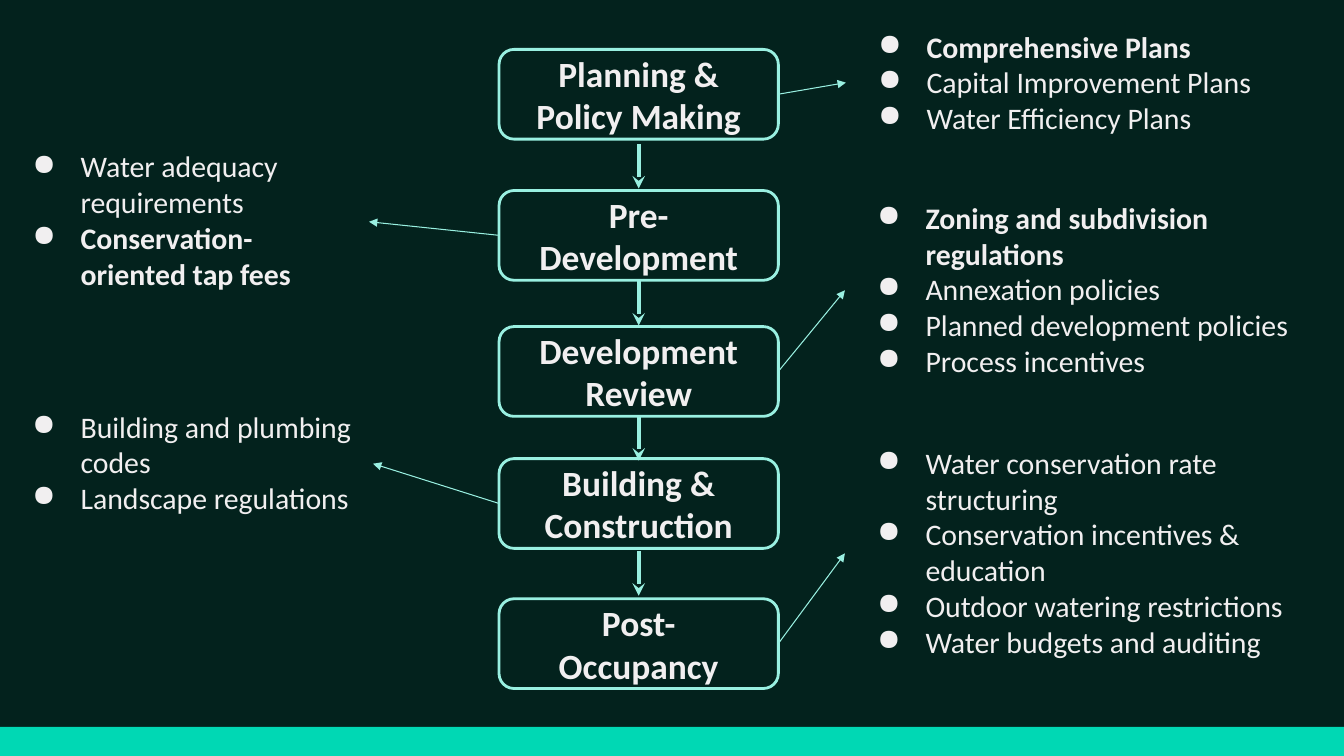
import pptx
import pptx.util
import pptx.dml.color
import pptx.enum.dml
import pptx.enum.shapes
import pptx.enum.text
import pptx.oxml
import pptx.oxml.ns
import lxml.etree

Inches = pptx.util.Inches
COLORS = {"background": "03221D", "footer": "00D8B4", "outline": "99F0E1", "text": "F1EFF0"}
FONT = "Calibri"
SLIDE_W, SLIDE_H = 13.33, 7.5
FOOTER_TOP = 7.21
STAGE_LEFT, STAGE_W, STAGE_H = 4.95, 2.77, 0.89
STAGE_MID = STAGE_LEFT + STAGE_W / 2
FLOW_LENGTH = 0.44

# Each stage: box top, top of the arrow leading to it, lines, and its policy list
# (box position and size, arrow tip, items as text and bold)
STAGES = [
    {"top": 0.49, "flow": None, "lines": ["Planning & Policy Making"],
     "box": (8.39, 0.15, 4.59, 1.35), "tip": (8.39, 0.82),
     "policies": [("Comprehensive Plans", True),
                  ("Capital Improvement Plans", False),
                  ("Water Efficiency Plans", False)]},
    {"top": 1.89, "flow": 1.43, "lines": ["Pre-", "Development"],
     "box": (0, 1.34, 3.65, 1.71), "tip": (3.66, 2.2),
     "policies": [("Water adequacy requirements", False),
                  ("Conservation-oriented tap fees", True)]},
    {"top": 3.24, "flow": 2.79, "lines": ["Development Review"],
     "box": (8.38, 1.85, 4.95, 2.06), "tip": (8.38, 2.88),
     "policies": [("Zoning and subdivision regulations", True),
                  ("Annexation policies", False),
                  ("Planned development policies", False),
                  ("Process incentives", False)]},
    {"top": 4.55, "flow": 4.13, "lines": ["Building & Construction"],
     "box": (0, 3.92, 3.7, 1.35), "tip": (3.7, 4.6),
     "policies": [("Building and plumbing codes", False),
                  ("Landscape regulations", False)]},
    {"top": 5.94, "flow": 5.47, "lines": ["Post-", "Occupancy"],
     "box": (8.38, 4.28, 4.95, 2.42), "tip": (8.38, 5.49),
     "policies": [("Water conservation rate structuring", False),
                  ("Conservation incentives & education", False),
                  ("Outdoor watering restrictions", False),
                  ("Water budgets and auditing", False)]},
]


def color(name):
    return pptx.dml.color.RGBColor.from_string(COLORS[name])


def add_bullet(paragraph):
    properties = paragraph._p.get_or_add_pPr()
    properties.set("marL", str(Inches(0.67)))
    properties.set("indent", str(Inches(-0.48)))
    bullet_color = pptx.oxml.parse_xml(
        f'<a:buClr {pptx.oxml.ns.nsdecls("a")}><a:srgbClr val="{COLORS["text"]}"/></a:buClr>')
    properties.append(bullet_color)
    bullet = lxml.etree.SubElement(properties, pptx.oxml.ns.qn("a:buChar"))
    bullet.set("char", "●")


def write(frame, items, size, align, margins, anchor, bullets=False):
    """Fill a text frame with (text, bold) items, one paragraph each."""
    frame.word_wrap = True
    frame.vertical_anchor = anchor
    frame.margin_left = frame.margin_right = Inches(margins[0])
    frame.margin_top = frame.margin_bottom = Inches(margins[1])
    for index, (text, bold) in enumerate(items):
        paragraph = frame.add_paragraph() if index else frame.paragraphs[0]
        paragraph.alignment = align
        if bullets:
            add_bullet(paragraph)
        run = paragraph.add_run()
        run.text = text
        run.font.name = FONT
        run.font.size = pptx.util.Pt(size)
        run.font.bold = bold
        run.font.color.rgb = color("text")


def add_arrow(slide, start, end, width, head):
    arrow = slide.shapes.add_connector(
        pptx.enum.shapes.MSO_CONNECTOR.STRAIGHT, *map(Inches, start + end))
    arrow.line.color.rgb = color("outline")
    arrow.line.width = pptx.util.Pt(width)
    tail = lxml.etree.SubElement(arrow.line._get_or_add_ln(), pptx.oxml.ns.qn("a:tailEnd"))
    tail.set("type", head)
    lxml.etree.SubElement(arrow._element.spPr, pptx.oxml.ns.qn("a:effectLst"))


def add_stage(slide, stage):
    # Stage box
    box = slide.shapes.add_shape(
        pptx.enum.shapes.MSO_SHAPE.ROUNDED_RECTANGLE,
        *map(Inches, (STAGE_LEFT, stage["top"], STAGE_W, STAGE_H)))
    box.shadow.inherit = False
    box.fill.background()
    box.line.color.rgb = color("outline")
    box.line.width = pptx.util.Pt(2)
    write(box.text_frame, [(line, True) for line in stage["lines"]], 25.3,
          pptx.enum.text.PP_ALIGN.CENTER, (0.1, 0.05), pptx.enum.text.MSO_ANCHOR.MIDDLE)

    # Arrow from the stage above
    if stage["flow"] is not None:
        add_arrow(slide, (STAGE_MID, stage["flow"]),
                  (STAGE_MID, stage["flow"] + FLOW_LENGTH), 3, "stealth")

    # Arrow to the policy list, from the nearer side of the box
    tip = stage["tip"]
    side = STAGE_LEFT if tip[0] < STAGE_LEFT else STAGE_LEFT + STAGE_W
    add_arrow(slide, (side, stage["top"] + STAGE_H / 2), tip, 0.75, "triangle")

    # Policy list
    policies = slide.shapes.add_textbox(*map(Inches, stage["box"]))
    write(policies.text_frame, stage["policies"], 21.3, pptx.enum.text.PP_ALIGN.LEFT,
          (0.13, 0.13), pptx.enum.text.MSO_ANCHOR.TOP, bullets=True)
    policies.text_frame.auto_size = pptx.enum.text.MSO_AUTO_SIZE.SHAPE_TO_FIT_TEXT


def main():
    deck = pptx.Presentation()
    deck.slide_width, deck.slide_height = Inches(SLIDE_W), Inches(SLIDE_H)
    slide = deck.slides.add_slide(deck.slide_layouts[6])
    slide.background.fill.solid()
    slide.background.fill.fore_color.rgb = color("background")

    # Footer band
    footer = slide.shapes.add_shape(
        pptx.enum.shapes.MSO_SHAPE.RECTANGLE,
        *map(Inches, (0, FOOTER_TOP, SLIDE_W, SLIDE_H - FOOTER_TOP)))
    footer.shadow.inherit = False
    footer.fill.solid()
    footer.fill.fore_color.rgb = color("footer")
    footer.line.fill.background()

    for stage in STAGES:
        add_stage(slide, stage)
    deck.save("out.pptx")


if __name__ == "__main__":
    main()
